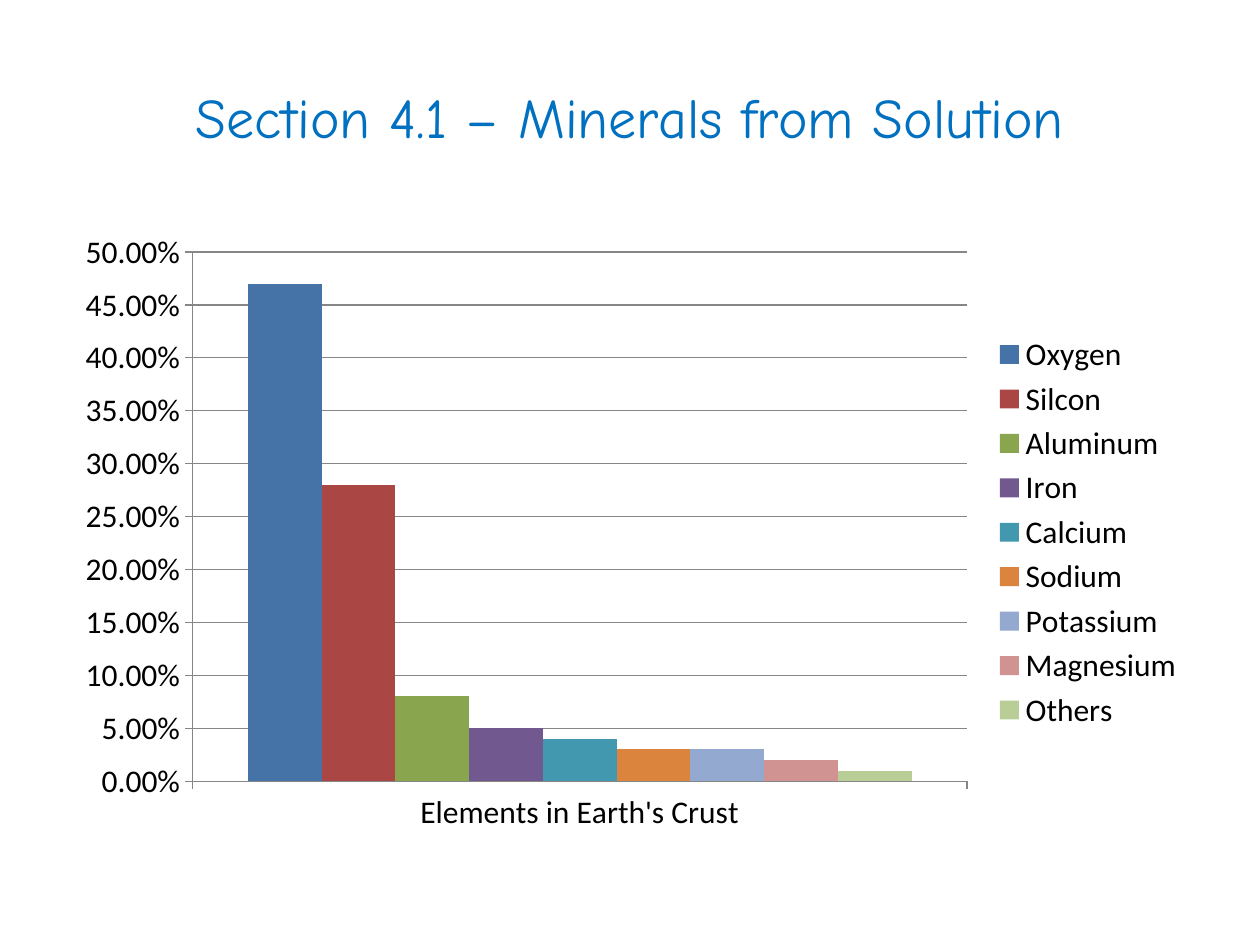
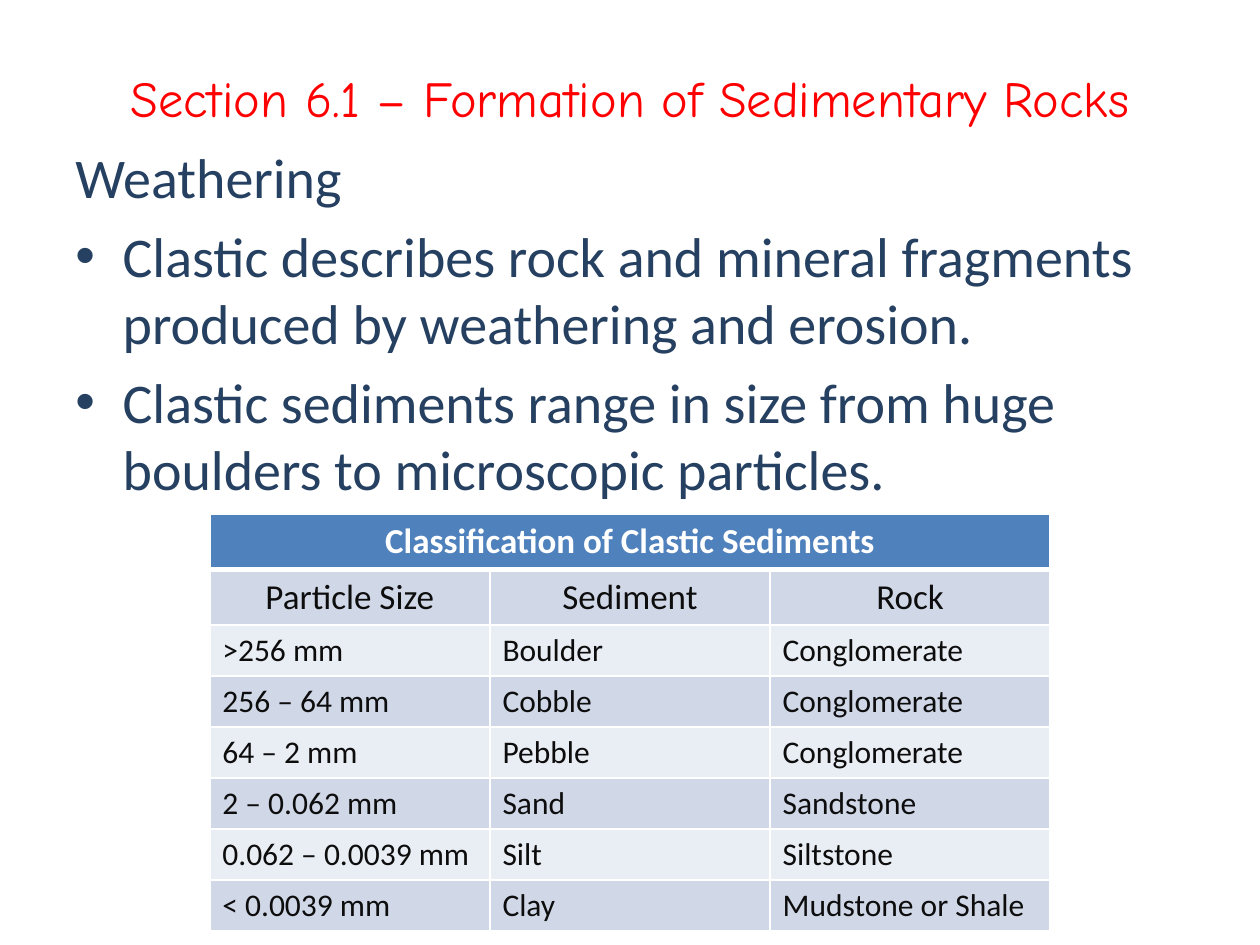
import pptx
import pptx.util
import pptx.chart.data
import pptx.enum.chart
import pptx.enum.text
import pptx.oxml.ns
from lxml import etree
from pptx.dml.color import RGBColor
from pptx.util import Inches, Pt

BLUE = RGBColor(0x00, 0x70, 0xC0)
RED = RGBColor(0xFF, 0x00, 0x00)
NAVY = RGBColor(0x25, 0x40, 0x61)
BLACK = RGBColor(0x00, 0x00, 0x00)
INK = RGBColor(0x0D, 0x0D, 0x0D)
WHITE = RGBColor(0xFF, 0xFF, 0xFF)
AXIS_GREY = RGBColor(0x86, 0x86, 0x86)
HEADER_FILL = RGBColor(0x4F, 0x81, 0xBD)
BAND_FILLS = (RGBColor(0xE9, 0xED, 0xF4), RGBColor(0xD0, 0xD8, 0xE8))
TITLE_FONT = "Comic Neue"
BODY_FONT = "Calibri"
CENTER = pptx.enum.text.PP_ALIGN.CENTER
LEFT = pptx.enum.text.PP_ALIGN.LEFT
SLIDE_WIDTH = Inches(10)

MINERALS_TITLE = "Section 4.1 – Minerals from Solution"
CRUST_LABEL = "Elements in Earth's Crust"
ELEMENTS = [
    ("Oxygen", 0.47, RGBColor(0x45, 0x72, 0xA7)),
    ("Silcon", 0.28, RGBColor(0xAA, 0x46, 0x43)),
    ("Aluminum", 0.08, RGBColor(0x89, 0xA5, 0x4E)),
    ("Iron", 0.05, RGBColor(0x71, 0x58, 0x8F)),
    ("Calcium", 0.04, RGBColor(0x41, 0x98, 0xAF)),
    ("Sodium", 0.03, RGBColor(0xDB, 0x84, 0x3D)),
    ("Potassium", 0.03, RGBColor(0x93, 0xA9, 0xCF)),
    ("Magnesium", 0.02, RGBColor(0xD1, 0x93, 0x92)),
    ("Others", 0.01, RGBColor(0xB9, 0xCD, 0x96)),
]

ROCKS_TITLE = "Section 6.1 – Formation of Sedimentary Rocks"
WEATHERING = "Weathering"
CLASTIC_POINTS = [
    "Clastic describes rock and mineral fragments produced by weathering and erosion.",
    "Clastic sediments range in size from huge boulders to microscopic particles.",
]
SEDIMENT_ROWS = [
    ("Classification of Clastic Sediments", "", ""),
    ("Particle Size", "Sediment", "Rock"),
    (">256 mm", "Boulder", "Conglomerate"),
    ("256 – 64 mm", "Cobble", "Conglomerate"),
    ("64 – 2 mm", "Pebble", "Conglomerate"),
    ("2 – 0.062 mm", "Sand", "Sandstone"),
    ("0.062 – 0.0039 mm", "Silt", "Siltstone"),
    ("< 0.0039 mm", "Clay", "Mudstone or Shale"),
]
LABEL_ROWS = 2


def write(paragraph, text, size, color, font=BODY_FONT, bold=False, align=LEFT):
    paragraph.alignment = align
    run = paragraph.add_run()
    run.text = text
    run.font.name = font
    run.font.size = Pt(size)
    run.font.bold = bold
    run.font.color.rgb = color


def add_titled_slide(deck, text, size, color, height):
    slide = deck.slides.add_slide(deck.slide_layouts[5])
    title = slide.shapes.title
    title.left, title.top = Inches(0.5), Inches(0.3)
    title.width, title.height = Inches(9), Inches(height)
    frame = title.text_frame
    frame.auto_size = pptx.enum.text.MSO_AUTO_SIZE.NONE
    frame.vertical_anchor = pptx.enum.text.MSO_ANCHOR.MIDDLE
    write(frame.paragraphs[0], text, size, color, font=TITLE_FONT, align=CENTER)
    return slide


def add_bullet(paragraph):
    properties = paragraph._p.get_or_add_pPr()
    properties.set("marL", str(Pt(27)))
    properties.set("indent", str(-Pt(27)))
    font = etree.SubElement(properties, pptx.oxml.ns.qn("a:buFont"))
    font.set("typeface", "Arial")
    etree.SubElement(properties, pptx.oxml.ns.qn("a:buChar")).set("char", "•")


def set_borders(cell, bottom):
    properties = cell._tc.get_or_add_tcPr()
    widths = {"a:lnL": 1, "a:lnR": 1, "a:lnT": 1, "a:lnB": bottom}
    for position, (side, width) in enumerate(widths.items()):
        line = etree.Element(pptx.oxml.ns.qn(side), w=str(Pt(width)))
        fill = etree.SubElement(line, pptx.oxml.ns.qn("a:solidFill"))
        etree.SubElement(fill, pptx.oxml.ns.qn("a:srgbClr"), val=str(WHITE))
        properties.insert(position, line)


def add_crust_chart(slide):
    data = pptx.chart.data.CategoryChartData(number_format="0.00%")
    data.categories = [CRUST_LABEL]
    for name, share, _ in ELEMENTS:
        data.add_series(name, [share])
    chart = slide.shapes.add_chart(
        pptx.enum.chart.XL_CHART_TYPE.COLUMN_CLUSTERED,
        Inches(0.5), Inches(1.75), Inches(9), Inches(4.95), data).chart
    chart.has_title = False
    chart.font.name = BODY_FONT
    chart.font.size = Pt(18)
    chart.font.color.rgb = BLACK
    chart.has_legend = True
    chart.legend.position = pptx.enum.chart.XL_LEGEND_POSITION.RIGHT
    chart.legend.include_in_layout = False

    columns = chart.plots[0]
    columns.gap_width = 150
    columns.overlap = 0
    columns.vary_by_categories = False
    for series, (_, _, color) in zip(columns.series, ELEMENTS):
        series.invert_if_negative = False
        series.format.fill.solid()
        series.format.fill.fore_color.rgb = color

    shares = chart.value_axis
    shares.minimum_scale, shares.maximum_scale, shares.major_unit = 0, 0.5, 0.05
    shares.has_major_gridlines = True
    shares.tick_labels.number_format = "0.00%"
    shares.tick_labels.number_format_is_linked = False
    for axis in (chart.category_axis, shares):
        axis.major_tick_mark = pptx.enum.chart.XL_TICK_MARK.OUTSIDE
    for ruled in (chart.category_axis, shares, shares.major_gridlines):
        ruled.format.line.color.rgb = AXIS_GREY
        ruled.format.line.width = Pt(0.75)


def add_weathering_text(slide):
    box = slide.shapes.add_textbox(Inches(0.5), Inches(1.08), Inches(9), Inches(6))
    frame = box.text_frame
    frame.word_wrap = True
    write(frame.paragraphs[0], WEATHERING, 32, NAVY)
    for point in CLASTIC_POINTS:
        paragraph = frame.add_paragraph()
        write(paragraph, point, 32, NAVY)
        paragraph.space_before = Pt(6.8)
        add_bullet(paragraph)


def add_sediment_table(slide):
    width, height, label_height = Inches(6.67), Inches(3.31), Inches(0.44)
    entry_height = (height - LABEL_ROWS * label_height) // (len(SEDIMENT_ROWS) - LABEL_ROWS)
    table = slide.shapes.add_table(
        len(SEDIMENT_ROWS), 3, (SLIDE_WIDTH - width) // 2, Inches(4.08),
        width, height).table
    for r, entries in enumerate(SEDIMENT_ROWS):
        heading = r == 0
        label = r < LABEL_ROWS
        table.rows[r].height = label_height if label else entry_height
        for c, entry in enumerate(entries):
            cell = table.cell(r, c)
            cell.fill.solid()
            cell.fill.fore_color.rgb = HEADER_FILL if heading else BAND_FILLS[r % 2]
            set_borders(cell, bottom=3 if heading else 1)
            if entry:
                write(cell.text_frame.paragraphs[0], entry, 20 if label else 18,
                      WHITE if heading else INK, bold=heading,
                      align=CENTER if label else LEFT)
    table.cell(0, 0).merge(table.cell(0, 2))


def main():
    deck = pptx.Presentation()
    deck.slide_width, deck.slide_height = SLIDE_WIDTH, Inches(7.5)
    minerals = add_titled_slide(deck, MINERALS_TITLE, 32, BLUE, height=1.25)
    add_crust_chart(minerals)
    rocks = add_titled_slide(deck, ROCKS_TITLE, 28.8, RED, height=0.95)
    add_weathering_text(rocks)
    add_sediment_table(rocks)
    deck.save("out.pptx")


if __name__ == "__main__":
    main()
